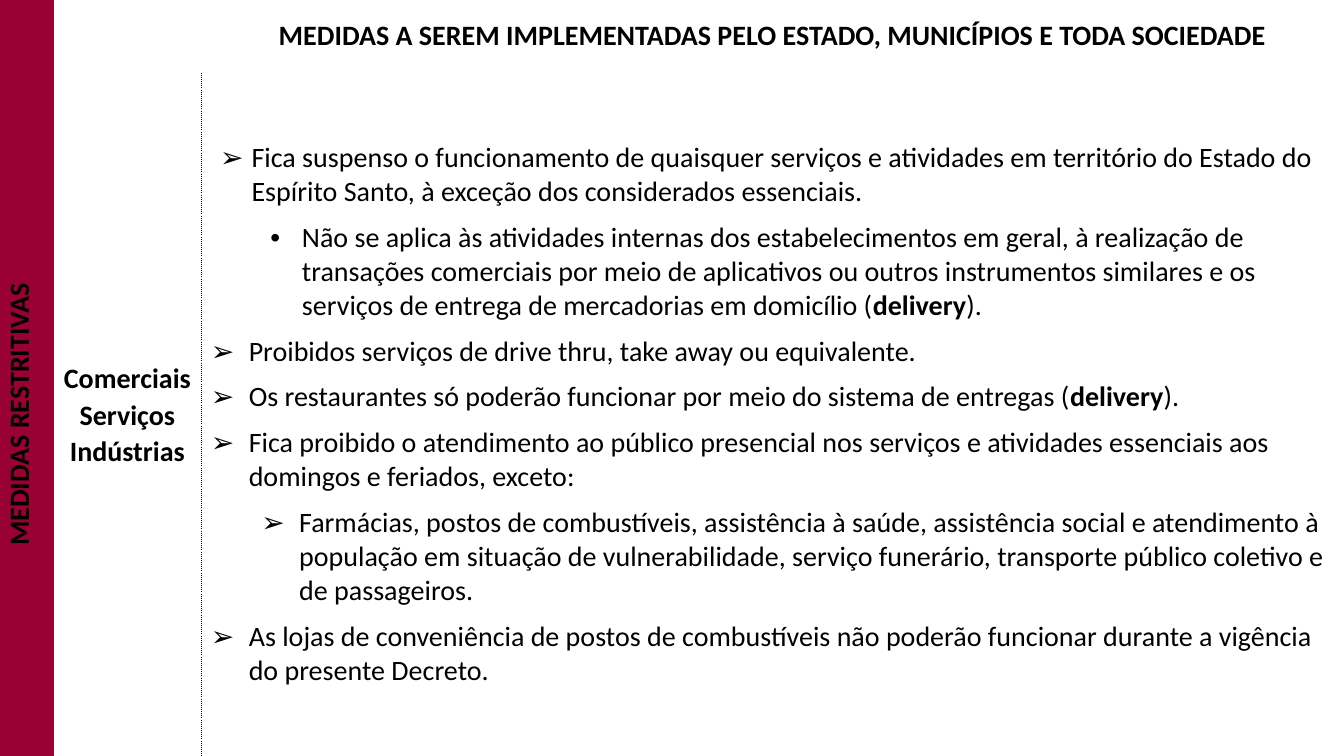
from lxml import etree
from pptx import Presentation
from pptx.dml.color import RGBColor
from pptx.enum.text import MSO_ANCHOR, PP_ALIGN
from pptx.oxml import parse_xml
from pptx.oxml.ns import qn
from pptx.util import Pt

CENTER = PP_ALIGN.CENTER
MIDDLE = MSO_ANCHOR.MIDDLE
BLACK = RGBColor(0x00, 0x00, 0x00)
WHITE = RGBColor(0xFF, 0xFF, 0xFF)
CRIMSON = RGBColor(0x99, 0x00, 0x33)
FONT = "Calibri"
FONT_SIZE = Pt(20)
SLIDE_WIDTH, SLIDE_HEIGHT = Pt(960), Pt(540)
COLUMN_WIDTHS = [Pt(38.5), Pt(105), Pt(816.5)]
ROW_HEIGHTS = [Pt(54), Pt(488)]
PLAIN_TABLE_STYLE = "{2D5ABB26-0587-4C30-8999-92F81FD0307C}"
NAMESPACE = "http://schemas.openxmlformats.org/drawingml/2006/main"

TITLE = "MEDIDAS A SEREM IMPLEMENTADAS PELO ESTADO, MUNICÍPIOS E TODA SOCIEDADE"
SIDE_LABEL = "MEDIDAS RESTRITIVAS"
SECTORS = ["Comerciais", "Serviços", "Indústrias"]
ARROW, DOT = "➢", "•"
DELIVERY = ("delivery", True)
CLOSING = (").", False)

# Level, left margin, hanging indent, bullet, runs as (text, bold)
MEASURES = [
    (0, 29, 22.5, ARROW, [(
        "Fica suspenso o funcionamento de quaisquer serviços e atividades em território do "
        "Estado do Espírito Santo, à exceção dos considerados essenciais.", False)]),
    (1, 65, 22.5, DOT, [(
        "Não se aplica às atividades internas dos estabelecimentos em geral, à realização de "
        "transações comerciais por meio de aplicativos ou outros instrumentos similares e os "
        "serviços de entrega de mercadorias em domicílio (", False), DELIVERY, CLOSING]),
    (0, 27, 27, ARROW, [("Proibidos serviços de drive thru, take away ou equivalente.", False)]),
    (0, 27, 27, ARROW, [(
        "Os restaurantes só poderão funcionar por meio do sistema de entregas (", False),
        DELIVERY, CLOSING]),
    (0, 27, 27, ARROW, [(
        "Fica proibido o atendimento ao público presencial nos serviços e atividades essenciais "
        "aos domingos e feriados, exceto:", False)]),
    (1, 63, 27, ARROW, [(
        "Farmácias, postos de combustíveis, assistência à saúde, assistência social e "
        "atendimento à população em situação de vulnerabilidade, serviço funerário, transporte "
        "público coletivo e de passageiros.", False)]),
    (0, 27, 27, ARROW, [(
        "As lojas de conveniência de postos de combustíveis não poderão funcionar durante a "
        "vigência do presente Decreto.", False)]),
]


def add_run(paragraph, text, bold):
    run = paragraph.add_run()
    run.text = text
    run.font.name = FONT
    run.font.size = FONT_SIZE
    run.font.bold = bold
    run.font.color.rgb = BLACK


def cell_paragraphs(cell, count):
    """Return the given number of empty paragraphs of a cell."""
    frame = cell.text_frame
    return [frame.paragraphs[0]] + [frame.add_paragraph() for _ in range(count - 1)]


def format_cell(cell, fill, side_margin):
    cell.fill.solid()
    cell.fill.fore_color.rgb = fill
    cell.vertical_anchor = MIDDLE
    cell.margin_left = cell.margin_right = side_margin
    cell.margin_top = cell.margin_bottom = 0


def add_dotted_border(cell, side):
    line = parse_xml(
        f'<a:{side} xmlns:a="{NAMESPACE}" w="{Pt(0.25)}"><a:solidFill>'
        f'<a:srgbClr val="{BLACK}"/></a:solidFill><a:prstDash val="sysDot"/></a:{side}>')
    cell._tc.get_or_add_tcPr().insert(0, line)


def fill_heading(cell, lines):
    """Write centred bold lines, one paragraph each."""
    for paragraph, text in zip(cell_paragraphs(cell, len(lines)), lines):
        paragraph.alignment = CENTER
        paragraph.line_spacing = 1.07
        add_run(paragraph, text, True)


def fill_measures(cell):
    for paragraph, measure in zip(cell_paragraphs(cell, len(MEASURES)), MEASURES):
        level, margin, hanging, bullet, runs = measure
        paragraph.level = level
        paragraph.space_after = Pt(8)
        properties = paragraph._p.get_or_add_pPr()
        properties.set("marL", str(Pt(margin)))
        properties.set("indent", str(-Pt(hanging)))
        etree.SubElement(properties, qn("a:buFont")).set("typeface", "Arial")
        etree.SubElement(properties, qn("a:buChar")).set("char", bullet)
        for text, bold in runs:
            add_run(paragraph, text, bold)


def add_measures_table(slide, left, top, width, height):
    frame = slide.shapes.add_table(2, 3, left, top, width, height)
    table = frame.table
    table.first_row = table.horz_banding = False
    table._tbl.tblPr.find(qn("a:tableStyleId")).text = PLAIN_TABLE_STYLE
    for column, column_width in zip(table.columns, COLUMN_WIDTHS):
        column.width = column_width
    for row, row_height in zip(table.rows, ROW_HEIGHTS):
        row.height = row_height

    side_top, sectors_top, title = table.rows[0].cells
    side, sectors, measures = table.rows[1].cells
    for cell, fill, margin in [
        (side_top, CRIMSON, Pt(3)), (sectors_top, WHITE, Pt(3)), (title, WHITE, Pt(3.5)),
        (side, CRIMSON, Pt(3)), (sectors, WHITE, Pt(3)), (measures, WHITE, Pt(7.2)),
    ]:
        format_cell(cell, fill, margin)

    fill_heading(title, [TITLE])
    fill_heading(side, [SIDE_LABEL])
    side._tc.get_or_add_tcPr().set("vert", "vert270")
    fill_heading(sectors, SECTORS)
    fill_measures(measures)
    add_dotted_border(sectors, "lnR")
    add_dotted_border(measures, "lnL")


def main():
    presentation = Presentation()
    presentation.slide_width = SLIDE_WIDTH
    presentation.slide_height = SLIDE_HEIGHT
    blank_layout = presentation.slide_layouts[6]
    slide = presentation.slides.add_slide(blank_layout)
    add_measures_table(slide, 0, Pt(-2), SLIDE_WIDTH, sum(ROW_HEIGHTS))
    presentation.save("out.pptx")


if __name__ == "__main__":
    main()
